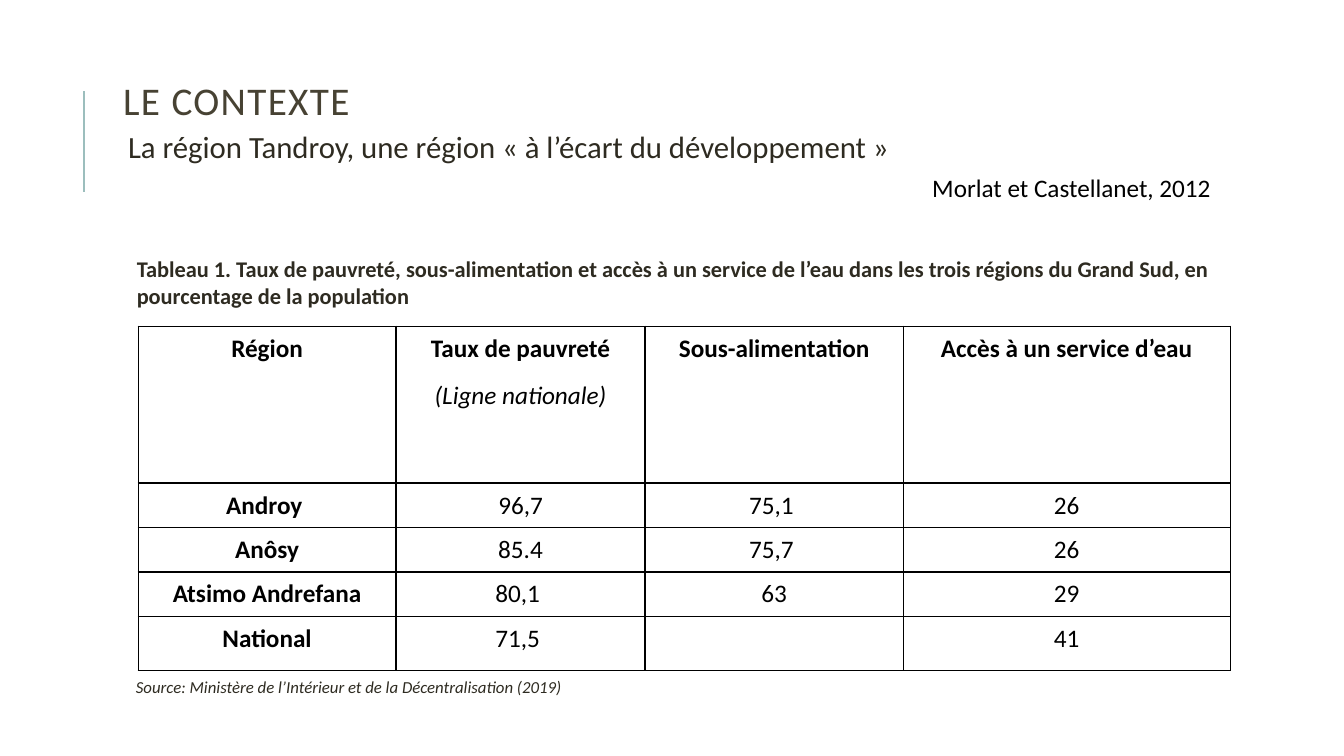
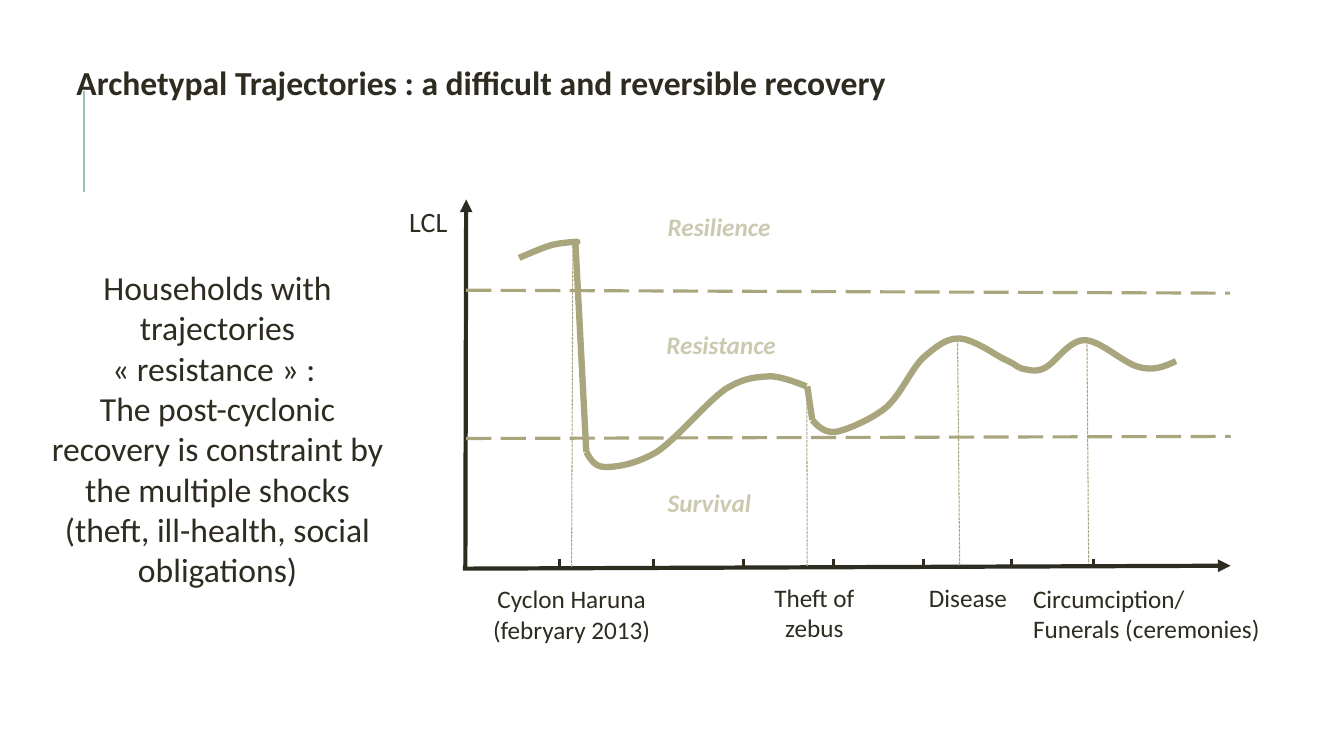
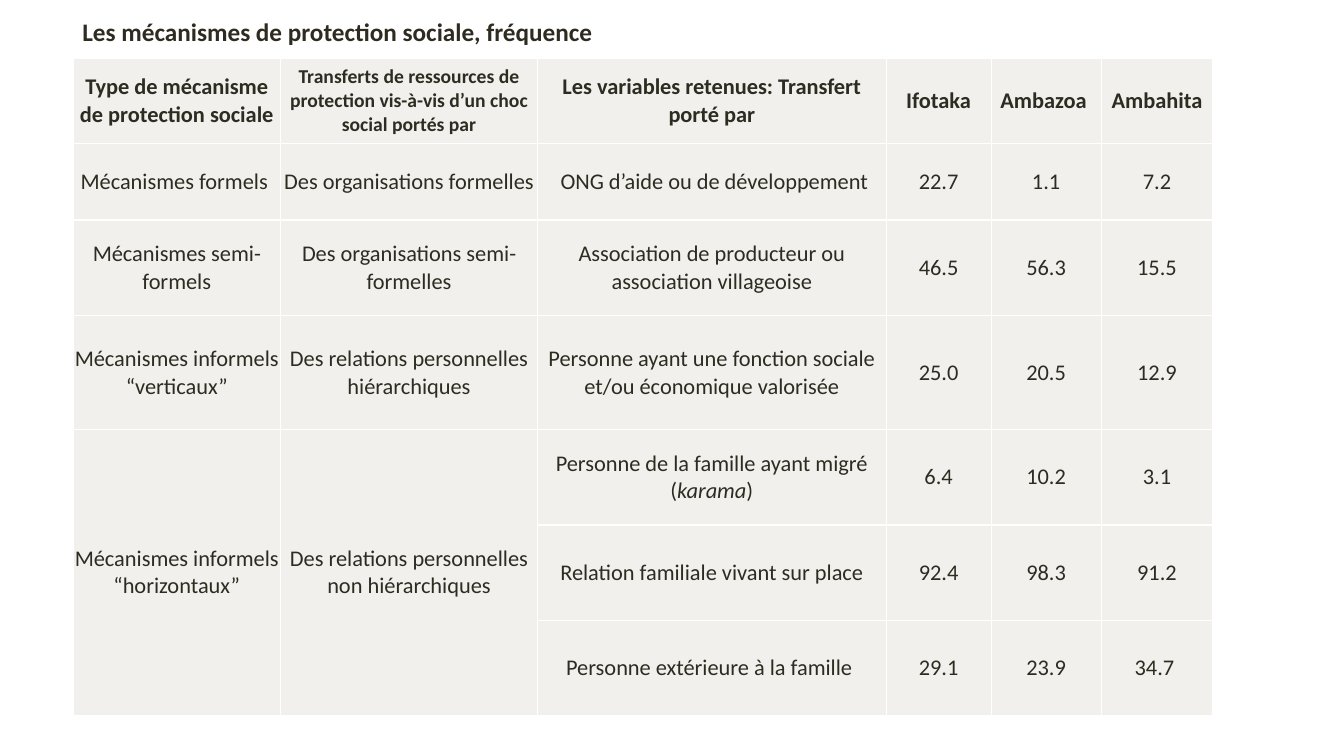
from lxml import etree
from pptx import Presentation
from pptx import util as u
from pptx.dml.color import RGBColor
from pptx.enum import dml, shapes, text
from pptx.oxml.ns import qn

SLIDE_WIDTH, SLIDE_HEIGHT = u.Inches(13.33), u.Inches(7.5)
GRID_COLUMNS, GRID_ROWS = 160, 90
FONT = "Calibri"
NBSP = chr(160)
COLORS = {
    "ink": "2E2B21", "title": "474233", "black": "000000", "white": "FFFFFF",
    "accent": "9CBEBD", "olive": "A9A57C", "pale": "CBC9B0", "cell": "F1F0EC",
}
LEFT = {"alignment": text.PP_ALIGN.LEFT}
CENTER = {"alignment": text.PP_ALIGN.CENTER}
RIGHT = {"alignment": text.PP_ALIGN.RIGHT}
TIGHT = {"line_spacing": 0.9}
TOP = {"vertical_anchor": text.MSO_ANCHOR.TOP}
MIDDLE = {"vertical_anchor": text.MSO_ANCHOR.MIDDLE}

REGION_ROWS = [
    ["Région", ["Taux de pauvreté", [("(Ligne nationale)", {"bold": False, "italic": True})]],
     "Sous-alimentation", "Accès à un service d’eau"],
    [f"Androy{NBSP}", "96,7", f"75,1{NBSP}", "26"],
    ["Anôsy", "85.4", f"75,7{NBSP}", "26"],
    ["Atsimo Andrefana", f"80,1{NBSP}", "63", "29"],
    ["National", f"71,5{NBSP}", None, "41"],
]
MECHANISM_ROWS = [
    ["Type de mécanisme de protection sociale",
     [[("Transferts de ressources de protection vis-à-vis d’un choc social portés par",
        {"size": u.Pt(14)})]],
     "Les variables retenues: Transfert porté par", "Ifotaka", f"Ambazoa{NBSP}", "Ambahita"],
    [f"Mécanismes formels{NBSP}", "Des organisations formelles",
     " ONG d’aide ou de développement", "22.7", "1.1", "7.2"],
    ["Mécanismes semi-formels", "Des organisations semi-formelles",
     "Association de producteur ou association villageoise", "46.5", "56.3", "15.5"],
    ["Mécanismes informels “verticaux”", "Des relations personnelles hiérarchiques",
     "Personne ayant une fonction sociale et/ou économique valorisée", "25.0", "20.5", "12.9"],
    ["Mécanismes informels “horizontaux”", "Des relations personnelles non hiérarchiques",
     [[("Personne de la famille ayant migré (", {}), ("karama", {"italic": True}), (")", {})]],
     "6.4", "10.2", "3.1"],
    [None, None, "Relation familiale vivant sur place", "92.4", "98.3", "91.2"],
    [None, None, f"Personne extérieure à la famille{NBSP}", "29.1", "23.9", "34.7 "],
]

# Each curve: a start point, then Bézier pieces (two control points and an end).
TRAJECTORY_CURVES = [
    [(61.8, 30.7),
     (63.2, 30.1), (64.6, 29.5), (65.6, 29.2),
     (66.7, 28.9), (68.4, 28.8), (68.4, 28.8),
     (68.9, 28.8), (68.8, 28.8), (68.5, 28.8)],
    [(69.8, 53.8),
     (70.3, 54.7), (70.8, 55.6), (72.1, 55.6),
     (73.6, 55.6), (75.8, 55.2), (78.2, 53.8),
     (80.6, 52.2), (84.2, 47.8), (86.4, 46.3),
     (88.7, 44.9), (90.1, 44.9), (91.7, 44.8),
     (93.2, 44.8), (96, 46), (96, 46)],
    [(96.7, 50),
     (97.4, 50.8), (98.2, 51.6), (99.6, 51.4),
     (101, 51.1), (103.8, 49.9), (105.5, 48.5),
     (107.3, 46.9), (108.5, 43.9), (109.9, 42.6),
     (111.4, 41.3), (112.6, 40.3), (114.1, 40.3),
     (115.8, 40.3), (118.4, 42.2), (119.6, 42.8),
     (121, 43.4), (121, 43.7), (121.7, 43.9),
     (122.5, 44), (123.2, 44.4), (124.4, 43.8),
     (125.6, 43.2), (127.2, 40.6), (129, 40.5),
     (130.9, 40.4), (133.8, 43.3), (135.6, 43.7),
     (137.4, 44.2), (138.7, 43.6), (140, 43)],
]
SUDDEN_DROPS = [((68.5, 28.8), (69.8, 53.8)), ((96.1, 46), (96.7, 50))]
THRESHOLDS = [((55.5, 34.55), (146.4, 34.9)), ((55.5, 52.2), (146.5, 51.95))]
EVENT_LINES = [
    ((68.2, 28.8), (68.05, 67.6)), ((96.05, 46), (96.1, 67.4)),
    ((114, 40.4), (114.25, 67.4)), ((129.4, 40.5), (129.6, 67.1)),
]
TICKS = [66.6, 77.8, 88.55, 99.2, 109.9, 120.4, 130.2]
ZONES = [("Resilience", 78.3, 24.6), ("Resistance", 78.15, 38.6), ("Survival", 78.3, 57.4)]
EVENTS = [
    (["Cyclon Haruna", "(febryary 2013)"], (56.4, 68.9, 23.3, 8.5), CENTER),
    (["Theft of zebus"], (90.15, 68.75, 13.6, 8.5), CENTER),
    (["Disease"], (109.4, 68.75, 13, 4.8), LEFT),
    (["Circumciption/", "Funerals (ceremonies)"], (121.8, 68.8, 32, 8.5), LEFT),
]


def across(columns):
    return u.Emu(round(SLIDE_WIDTH * columns / GRID_COLUMNS))


def down(rows):
    return u.Emu(round(SLIDE_HEIGHT * rows / GRID_ROWS))


def place(left, top, width, height):
    return across(left), down(top), across(width), down(height)


def rgb(name):
    return RGBColor.from_string(COLORS[name])


def set_all(target, values):
    for name, value in values.items():
        setattr(target, name, value)


def margins(left, top, right, bottom):
    sides = zip(("left", "top", "right", "bottom"), (left, top, right, bottom))
    return {f"margin_{side}": u.Inches(value) for side, value in sides}


def write(frame, paragraphs, size, color="ink", layout=None, gap=0, **font_values):
    """Fill a text frame; a paragraph is a string or a list of (text, font values)."""
    for index, content in enumerate(paragraphs):
        paragraph = frame.paragraphs[0] if index == 0 else frame.add_paragraph()
        set_all(paragraph, layout or LEFT)
        if index and gap:
            paragraph.space_before = u.Pt(gap)
        runs = [(content, {})] if isinstance(content, str) else content
        for words, own_values in runs:
            run = paragraph.add_run()
            run.text = words
            values = {"name": FONT, "size": u.Pt(size), **font_values, **own_values}
            set_all(run.font, values)
            run.font.color.rgb = rgb(color)


def add_text(slide, box, paragraphs, size, frame_values=None, **style):
    frame = slide.shapes.add_textbox(*place(*box)).text_frame
    set_all(frame, {"word_wrap": True, **(frame_values or {})})
    write(frame, paragraphs, size, **style)


def add_title_slide(presentation, title, box, size, frame_values, **style):
    slide = presentation.slides.add_slide(presentation.slide_layouts[5])
    shape = slide.shapes.title
    set_all(shape, dict(zip(("left", "top", "width", "height"), place(*box))))
    frame_values = {"auto_size": text.MSO_AUTO_SIZE.NONE, "word_wrap": True, **frame_values}
    set_all(shape.text_frame, frame_values)
    write(shape.text_frame, [title], size, **style)
    return slide


def add_line(slide, start, end, color, width, dash=None, arrow=False):
    connector = slide.shapes.add_connector(
        shapes.MSO_CONNECTOR.STRAIGHT,
        across(start[0]), down(start[1]), across(end[0]), down(end[1]))
    connector.line.color.rgb = rgb(color)
    connector.line.width = u.Pt(width)
    if dash:
        connector.line.dash_style = dash
    properties = connector._element.spPr
    if arrow:
        etree.SubElement(properties.find(qn("a:ln")), qn("a:tailEnd"), type="triangle")
    etree.SubElement(properties, qn("a:effectLst"))
    return connector


def share_accent(slide):
    """Draw the accent line and move it to the layout that all slides use."""
    accent = add_line(slide, (10, 22.8), (10, 10.8), "accent", 1.5)
    slide.slide_layout.shapes._spTree.append(accent._element)


def add_curve(slide, curve, color, width):
    points = [(across(x), down(y)) for x, y in curve]
    builder = slide.shapes.build_freeform(*points[0])
    builder.add_line_segments(points[1:], close=False)
    shape = builder.convert_to_shape()
    shape.shadow.inherit = False
    shape.fill.background()
    shape.line.color.rgb = rgb(color)
    shape.line.width = u.Pt(width)
    outline = next(shape._element.iter(qn("a:path")))
    segments = outline.findall(qn("a:lnTo"))
    for first in range(0, len(segments), 3):
        bezier = etree.SubElement(outline, qn("a:cubicBezTo"))
        for segment in segments[first:first + 3]:
            bezier.append(segment[0])
            outline.remove(segment)


def set_borders(cell, color):
    properties = cell._tc.get_or_add_tcPr()
    for side in ("lnL", "lnR", "lnT", "lnB"):
        line = etree.SubElement(properties, qn(f"a:{side}"), w=str(u.Pt(1)))
        fill = etree.SubElement(line, qn("a:solidFill"))
        etree.SubElement(fill, qn("a:srgbClr"), val=COLORS[color])


def add_grid_table(slide, corner, columns, rows, contents, size, color, border,
                   cell_values, fill=None, bold_column=False):
    """Draw a table whose header row, and first column on request, are bold."""
    box = place(*corner, sum(columns), sum(rows))
    table = slide.shapes.add_table(len(rows), len(columns), *box).table
    set_all(table, {"first_row": False, "horz_banding": False})
    for column, width in zip(table.columns, columns):
        column.width = across(width)
    for row, height in zip(table.rows, rows):
        row.height = down(height)
    for row_index, row_contents in enumerate(contents):
        for column_index, content in enumerate(row_contents):
            cell = table.cell(row_index, column_index)
            set_all(cell, cell_values)
            set_borders(cell, border)
            if fill:
                cell.fill.solid()
                cell.fill.fore_color.rgb = rgb(fill)
            else:
                cell.fill.background()
            if content:
                paragraphs = [content] if isinstance(content, str) else content
                bold = row_index == 0 or (bold_column and column_index == 0)
                write(cell.text_frame, paragraphs, size, color=color, layout=CENTER,
                      gap=12, bold=bold)
    return table


def build_context(presentation):
    slide = add_title_slide(presentation, "LE CONTEXTE", (13.45, 7.7, 127.6, 9.5), 28,
                            MIDDLE, color="title", layout={**LEFT, "line_spacing": 0.8})
    title_run = slide.shapes.title.text_frame.paragraphs[0].runs[0]
    title_run._r.get_or_add_rPr().set("spc", "100")
    share_accent(slide)
    add_text(slide, (13.45, 15.1, 127.6, 6),
             [f"La région Tandroy, une région «{NBSP}à l’écart du développement{NBSP}»"], 22,
             margins(0.15, 0.05, 0.05, 0.05), layout=TIGHT)
    add_grid_table(slide, (16.45, 38.85), (30.7, 29.65, 30.75, 38.9),
                   (18.65, 5.3, 5.3, 5.3, 6.4), REGION_ROWS, 18, "black", "black",
                   {**TOP, **margins(0.07, 0.07, 0.07, 0.07)}, bold_column=True)
    add_text(slide, (15.1, 29.8, 130.1, 7.7),
             ["Tableau 1. Taux de pauvreté, sous-alimentation et accès à un service de l’eau "
              "dans les trois régions du Grand Sud, en pourcentage de la population"],
             16, bold=True)
    add_text(slide, (15, 80, 130.1, 3.6),
             ["Source: Ministère de l’Intérieur et de la Décentralisation (2019)"],
             12, italic=True)
    add_text(slide, (109.8, 19.9, 40, 4.8), ["Morlat et Castellanet, 2012"], 18, color="black")


def build_trajectories(presentation):
    slide = add_title_slide(
        presentation, "Archetypal Trajectories : a difficult and reversible recovery",
        (8.5, 7.3, 144.7, 6), 24, {**TOP, **margins(0.05, 0.05, 0.05, 0.05)},
        layout={**LEFT, **TIGHT}, bold=True)
    add_line(slide, (55.4, 67.6), (55.5, 23.75), "ink", 3, arrow=True)
    add_line(slide, (55.1, 67.7), (146.5, 67.35), "ink", 3, arrow=True)
    for start, end in THRESHOLDS:
        add_line(slide, start, end, "olive", 2.25, dml.MSO_LINE.LONG_DASH)
    for x in TICKS:
        add_line(slide, (x, 66.6), (x, 67.5), "ink", 2)
    for curve in TRAJECTORY_CURVES:
        add_curve(slide, curve, "olive", 4.5)
    for start, end in SUDDEN_DROPS:
        add_line(slide, start, end, "olive", 4.5)
    for start, end in EVENT_LINES:
        add_line(slide, start, end, "olive", 0.75, dml.MSO_LINE.SQUARE_DOT)
    add_text(slide, (41.9, 23.8, 12.55, 5.3), ["LCL"], 20, layout=RIGHT)
    for zone, left, top in ZONES:
        add_text(slide, (left, top, 18, 4.8), [zone], 18, color="pale", bold=True, italic=True)
    for label, box, layout in EVENTS:
        add_text(slide, box, label, 18, layout=layout)
    add_text(slide, (4.1, 31.2, 43.6, 40),
             [f"Households with trajectories «{NBSP}resistance{NBSP}» : ",
              "The post-cyclonic recovery is constraint by the multiple shocks "
              "(theft, ill-health, social obligations)"], 24, layout=CENTER)


def build_mechanisms(presentation):
    slide = add_title_slide(
        presentation, "Les mécanismes de protection sociale, fréquence",
        (8.6, 1.3, 135.5, 4.8), 18, TOP, bold=True)
    table = add_grid_table(
        slide, (8.7, 6.95), (24.7, 30.6, 41.5, 12.5, 13.1, 13.3),
        (10.15, 9.1, 11.4, 13.55, 11.35, 11.35, 11.35), MECHANISM_ROWS, 16, "ink", "white",
        {**MIDDLE, **margins(0, 0, 0, 0)}, fill="cell")
    for column in (0, 1):
        table.cell(4, column).merge(table.cell(6, column))


def main():
    presentation = Presentation()
    presentation.slide_width, presentation.slide_height = SLIDE_WIDTH, SLIDE_HEIGHT
    build_context(presentation)
    build_trajectories(presentation)
    build_mechanisms(presentation)
    presentation.save("out.pptx")


if __name__ == "__main__":
    main()
